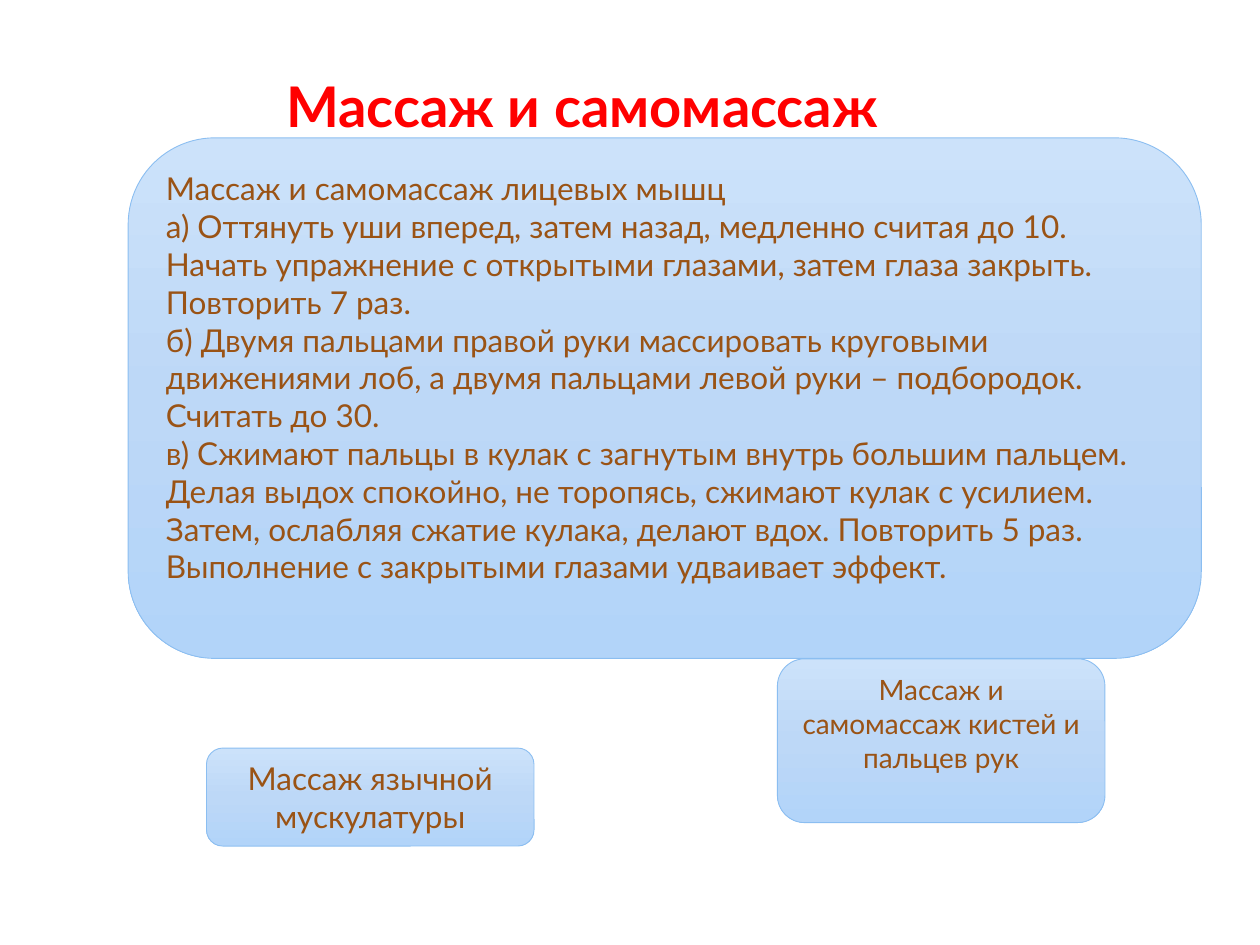
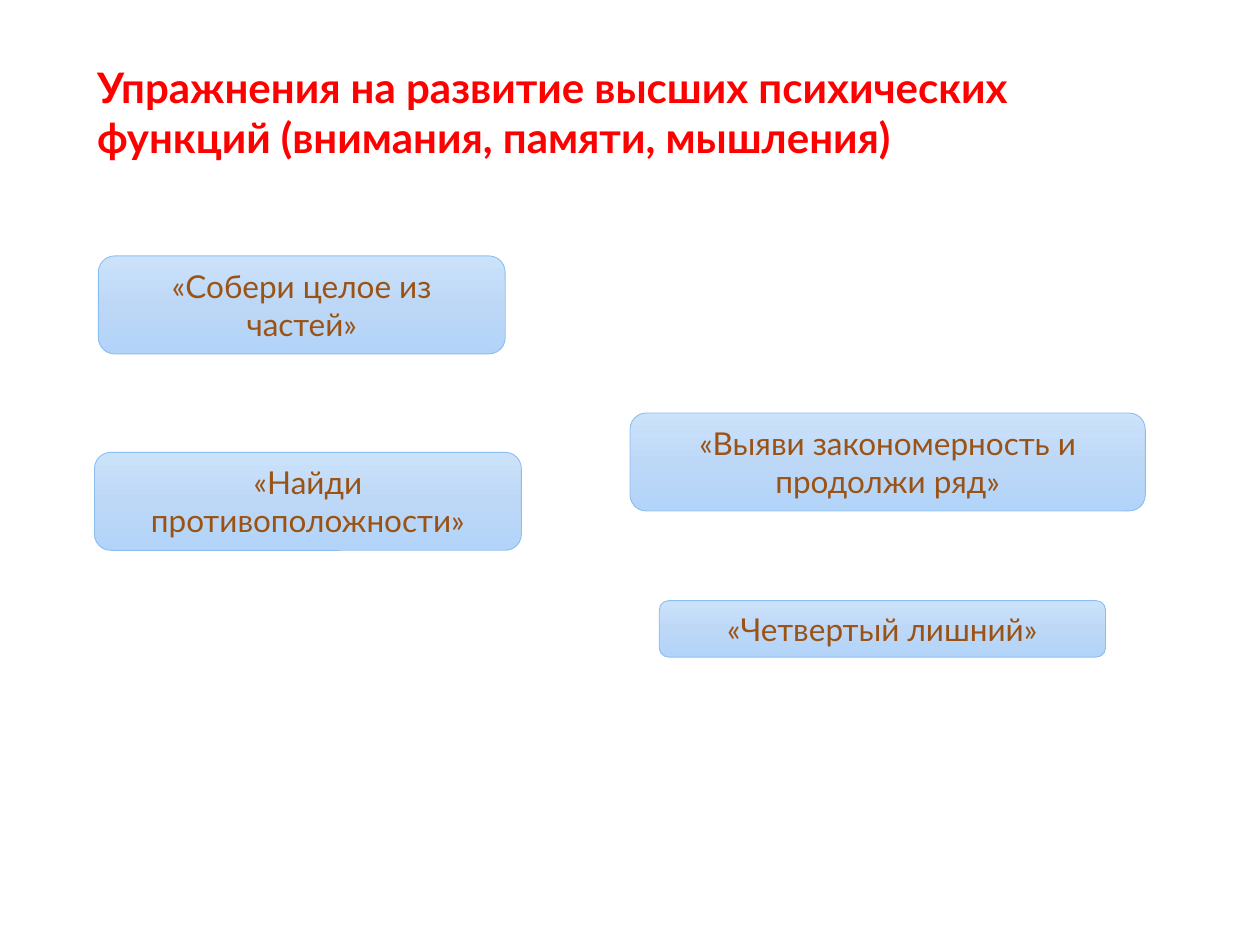
from copy import deepcopy
from pptx import Presentation
from pptx.dml.color import RGBColor
from pptx.enum.shapes import MSO_SHAPE
from pptx.enum.text import MSO_ANCHOR, MSO_AUTO_SIZE, PP_ALIGN
from pptx.oxml.ns import qn
from pptx.util import Pt

COLORS = {"title": "FF0000", "text": "9A5315", "line": "8BBEF1",
          "top": "CCE2FA", "middle": "BDD8F7", "bottom": "B2D4F9"}
FRAME_FORMAT = {"word_wrap": True, "vertical_anchor": MSO_ANCHOR.TOP,
                "auto_size": MSO_AUTO_SIZE.SHAPE_TO_FIT_TEXT}
BOX_HEIGHT = 56

FACE_MASSAGE = [
    "Массаж и самомассаж лицевых мышц",
    "а) Оттянуть уши вперед, затем назад, медленно считая до 10. Начать упражнение "
    "с открытыми глазами, затем глаза закрыть. Повторить 7 раз.",
    "б) Двумя пальцами правой руки массировать круговыми движениями лоб, "
    "а двумя пальцами левой руки – подбородок. Считать до 30.",
    "в) Сжимают пальцы в кулак с загнутым внутрь большим пальцем. Делая выдох спокойно, "
    "не торопясь, сжимают кулак с усилием. Затем, ослабляя сжатие кулака, делают вдох. "
    "Повторить 5 раз. Выполнение с закрытыми глазами удваивает эффект.",
]

SLIDES = [
    {"title": "Массаж и самомассаж", "place": (156.24, 37.5, 399.5, 46), "size": 32,
     "boxes": [
         ((444.25, 376.5, 187.2, 93.6), 16, PP_ALIGN.CENTER,
          ["Массаж и самомассаж кистей и пальцев рук"]),
         ((118, 427.5, 187.2, BOX_HEIGHT), 18, PP_ALIGN.CENTER,
          ["Массаж язычной мускулатуры"]),
         ((73.25, 78.75, 613.25, 297.5), 18, PP_ALIGN.LEFT, FACE_MASSAGE),
     ]},
    {"title": "Упражнения на развитие высших психических функций (внимания, памяти, мышления)",
     "place": (48.25, 31.5, 629.25, 65.5), "size": 24,
     "boxes": [
         ((376.75, 343.25, 255, 32.25), 18, PP_ALIGN.CENTER, ["«Четвертый лишний»"]),
         ((54, 258.5, 244, BOX_HEIGHT), 18, PP_ALIGN.CENTER, ["«Найди противоположности»"]),
         ((56.25, 146.25, 232.5, BOX_HEIGHT), 18, PP_ALIGN.CENTER, ["«Собери целое из частей»"]),
         ((360, 236, 294.5, BOX_HEIGHT), 18, PP_ALIGN.CENTER,
          ["«Выяви закономерность и продолжи ряд»"]),
     ]},
]


def write_text(shape, lines, size, color, bold, alignment):
    frame = shape.text_frame
    for name, value in FRAME_FORMAT.items():
        setattr(frame, name, value)
    font_format = {"name": "Lato", "size": Pt(size), "bold": bold}
    for index, line in enumerate(lines):
        para = frame.add_paragraph() if index else frame.paragraphs[0]
        para.alignment = alignment
        span = para.add_run()
        span.text = line
        for name, value in font_format.items():
            setattr(span.font, name, value)
        span.font.color.rgb = RGBColor.from_string(COLORS[color])


def add_box(page, place):
    box = page.shapes.add_shape(MSO_SHAPE.ROUNDED_RECTANGLE, *map(Pt, place))
    box.shadow.inherit = False
    box.line.width = Pt(0.5)
    box.line.color.rgb = RGBColor.from_string(COLORS["line"])
    box.fill.gradient()
    box.fill.gradient_angle = 270
    stop_list = box._element.spPr.find(qn("a:gradFill")).find(qn("a:gsLst"))
    stop_list.insert(1, deepcopy(stop_list[0]))
    for stop, color, position in zip(box.fill.gradient_stops,
                                     ("top", "middle", "bottom"), (0, 0.5, 1)):
        stop.position = position
        stop.color.rgb = RGBColor.from_string(COLORS[color])
    return box


deck = Presentation()
deck.slide_width, deck.slide_height = Pt(720), Pt(540)
for content in SLIDES:
    page = deck.slides.add_slide(deck.slide_layouts[5])
    title = page.shapes.title
    title.left, title.top, title.width, title.height = map(Pt, content["place"])
    write_text(title, [content["title"]], content["size"], "title", True, PP_ALIGN.LEFT)
    for place, size, alignment, lines in content["boxes"]:
        box = add_box(page, place)
        write_text(box, lines, size, "text", False, alignment)

deck.save("out.pptx")
